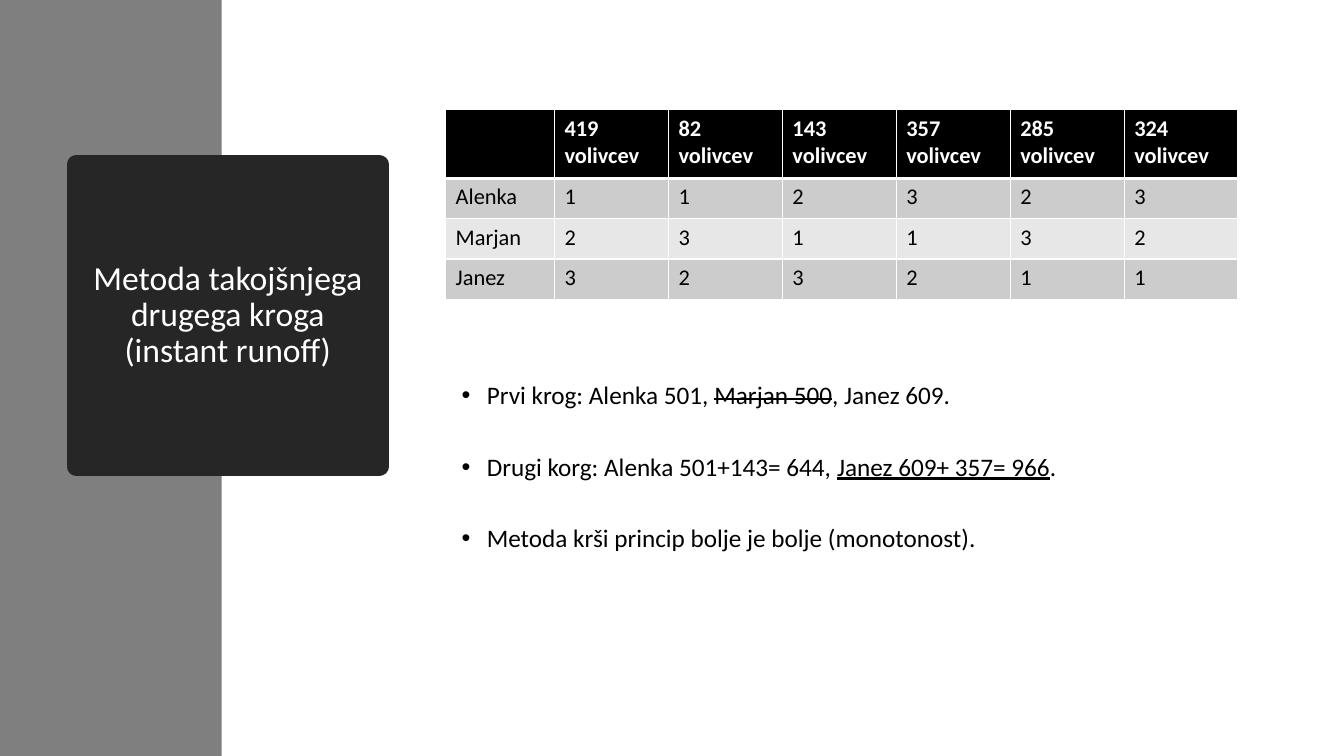
import pptx
import pptx.util
import pptx.dml.color
import pptx.enum.shapes
import pptx.enum.text
import lxml.etree
from pptx.oxml.ns import qn
from pptx.util import Inches, Pt

RGBColor = pptx.dml.color.RGBColor
BLACK = RGBColor(0x00, 0x00, 0x00)
WHITE = RGBColor(0xFF, 0xFF, 0xFF)
SIDEBAR_GRAY = RGBColor(0x7F, 0x7F, 0x7F)
TITLE_GRAY = RGBColor(0x26, 0x26, 0x26)
BANDS = (RGBColor(0xCC, 0xCC, 0xCC), RGBColor(0xE7, 0xE7, 0xE7))
FONT = "Calibri"

TITLE = "Metoda takojšnjega drugega kroga (instant runoff)"
VOTERS = [419, 82, 143, 357, 285, 324]
RANKINGS = {
    "Alenka": [1, 1, 2, 3, 2, 3],
    "Marjan": [2, 3, 1, 1, 3, 2],
    "Janez": [3, 2, 3, 2, 1, 1],
}
ROUNDS = [
    [("Prvi krog: Alenka 501, ", None), ("Marjan 500", "strike"), (", Janez 609.", None)],
    [("Drugi korg: Alenka 501+143= 644, ", None), ("Janez 609+ 357= 966", "underline"), (".", None)],
    [("Metoda krši princip bolje je bolje (monotonost).", None)],
]
CONTENT_LEFT, CONTENT_WIDTH = 4.42, 7.86
NAME_WIDTH = 1.08
HEADER_HEIGHT, ROW_HEIGHT = 0.68, 0.4


def style_font(font, size, color, bold=False):
    font.name = FONT
    font.size = Pt(size)
    font.color.rgb = color
    font.bold = bold


def add_sidebar(page, title):
    sidebar = page.shapes.add_shape(
        pptx.enum.shapes.MSO_SHAPE.RECTANGLE, 0, 0, Inches(2.2), Inches(7.5))
    sidebar.shadow.inherit = False
    sidebar.fill.solid()
    sidebar.fill.fore_color.rgb = SIDEBAR_GRAY
    sidebar.line.fill.background()
    title.element.addprevious(sidebar.element)


def format_title(title):
    title.left, title.top = Inches(0.76), Inches(1.63)
    title.width = title.height = Inches(3)
    title.fill.solid()
    title.fill.fore_color.rgb = TITLE_GRAY
    title.line.color.rgb = TITLE_GRAY
    title.line.width = Pt(13.75)
    outline = title.element.spPr.find(qn("a:ln"))
    lxml.etree.SubElement(outline, qn("a:round"))
    frame = title.text_frame
    frame.text = TITLE
    frame.word_wrap = True
    frame.auto_size = pptx.enum.text.MSO_AUTO_SIZE.NONE
    frame.vertical_anchor = pptx.enum.text.MSO_ANCHOR.MIDDLE
    para = frame.paragraphs[0]
    para.alignment = pptx.enum.text.PP_ALIGN.CENTER
    para.line_spacing = 0.9
    style_font(para.runs[0].font, 24, WHITE)


def add_borders(cell, bottom_width):
    properties = cell._tc.get_or_add_tcPr()
    for side, width in (("L", 1), ("R", 1), ("T", 1), ("B", bottom_width)):
        border = lxml.etree.SubElement(properties, qn(f"a:ln{side}"), w=str(Pt(width)))
        fill = lxml.etree.SubElement(border, qn("a:solidFill"))
        lxml.etree.SubElement(fill, qn("a:srgbClr"), val=str(WHITE))


def add_rankings(page):
    rows = [[""] + [f"{count} volivcev" for count in VOTERS]]
    rows += [[name] + ranks for name, ranks in RANKINGS.items()]
    height = HEADER_HEIGHT + ROW_HEIGHT * len(RANKINGS)
    table = page.shapes.add_table(
        len(rows), len(rows[0]), Inches(CONTENT_LEFT), Inches(1.09),
        Inches(CONTENT_WIDTH), Inches(height)).table
    voter_width = (CONTENT_WIDTH - NAME_WIDTH) / len(VOTERS)
    for index, column in enumerate(table.columns):
        column.width = Inches(voter_width if index else NAME_WIDTH)
    for index, values in enumerate(rows):
        header = index == 0
        table.rows[index].height = Inches(HEADER_HEIGHT if header else ROW_HEIGHT)
        for cell, value in zip(table.rows[index].cells, values):
            add_borders(cell, 3 if header else 1)
            cell.fill.solid()
            cell.fill.fore_color.rgb = BLACK if header else BANDS[(index - 1) % 2]
            para = cell.text_frame.paragraphs[0]
            para.text = str(value)
            for span in para.runs:
                style_font(span.font, 16, WHITE if header else BLACK, header)


def add_rounds(page):
    box = page.shapes.add_textbox(
        Inches(CONTENT_LEFT), Inches(3.75), Inches(CONTENT_WIDTH), Inches(3.01))
    frame = box.text_frame
    frame.word_wrap = True
    for index, parts in enumerate(ROUNDS):
        para = frame.add_paragraph() if index else frame.paragraphs[0]
        para.line_spacing = 0.9
        para.space_after = Pt(31.5)
        properties = para._p.get_or_add_pPr()
        properties.set("marL", str(Inches(0.31)))
        properties.set("indent", str(Inches(-0.25)))
        lxml.etree.SubElement(properties, qn("a:buFont"), typeface="Arial")
        lxml.etree.SubElement(properties, qn("a:buChar"), char="•")
        for text, mark in parts:
            span = para.add_run()
            span.text = text
            style_font(span.font, 18, BLACK)
            if mark == "underline":
                span.font.underline = True
            elif mark == "strike":
                span._r.get_or_add_rPr().set("strike", "sngStrike")


def main():
    deck = pptx.Presentation()
    deck.slide_width, deck.slide_height = Inches(13.33), Inches(7.5)
    page = deck.slides.add_slide(deck.slide_layouts[5])
    title = page.shapes.title
    format_title(title)
    add_sidebar(page, title)
    add_rounds(page)
    add_rankings(page)
    deck.save("out.pptx")


if __name__ == "__main__":
    main()
